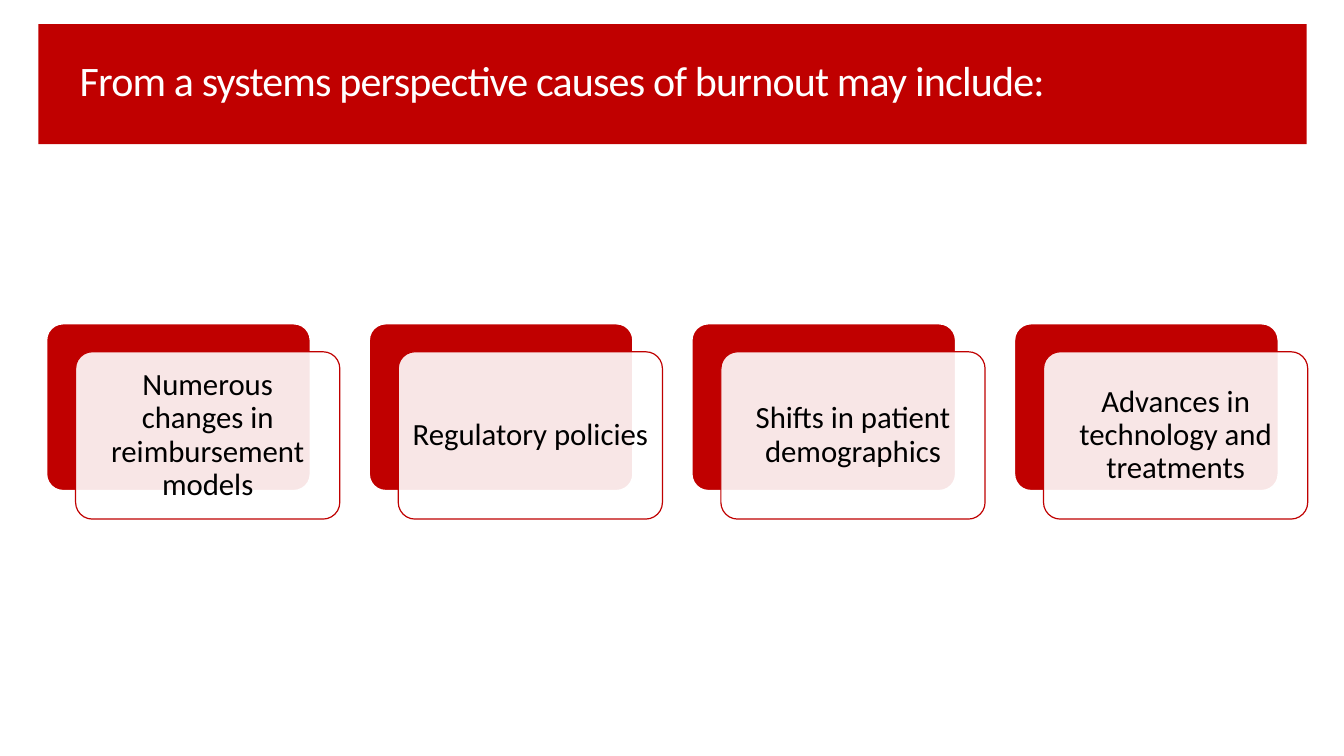
"""Build a slide on the systemic causes of burnout."""
from lxml.etree import SubElement
from pptx import Presentation
from pptx.dml.color import RGBColor
from pptx.enum.shapes import MSO_SHAPE
from pptx.enum.text import MSO_ANCHOR, MSO_AUTO_SIZE, PP_ALIGN
from pptx.oxml.ns import qn
from pptx.util import Inches, Pt

TITLE = "From a systems perspective causes of burnout may include:"
CAUSES = [
    "Numerous changes in reimbursement models",
    "Regulatory policies",
    "Shifts in patient demographics",
    "Advances in technology and treatments",
]
COLORS = {"red": "C00000", "white": "FFFFFF", "black": "000000"}
SIZE = (13.33, 7.5)
BANNER = (0.38, 0.24, 12.58, 1.19)
HEAD = (0.69, 0.33, 11.54, 0.99)
CARD = (2.62, 1.66)
LEFT, TOP, PITCH = 0.46, 3.21, 3.2
SHIFT = (0.29, 0.28)
INSET = 0.08


def color(name):
    return RGBColor.from_string(COLORS[name])


def add_box(slide, kind, box, fill, line=None, width=0):
    shape = slide.shapes.add_shape(kind, *map(Inches, box))
    shape.shadow.inherit = False
    shape.fill.solid()
    shape.fill.fore_color.rgb = color(fill)
    if line:
        shape.adjustments[0] = 0.1
        shape.line.color.rgb = color(line)
        shape.line.width = Pt(width)
    else:
        shape.line.fill.background()
    return shape


def set_text(shape, text, size, ink, align):
    frame = shape.text_frame
    frame.text = text
    frame.word_wrap = True
    frame.auto_size = MSO_AUTO_SIZE.NONE
    frame.vertical_anchor = MSO_ANCHOR.MIDDLE
    para = frame.paragraphs[0]
    para.alignment = align
    para.line_spacing = 0.9
    para.font.name = "Calibri"
    para.font.size = Pt(size)
    para.font.color.rgb = color(ink)
    return frame


def add_title(slide):
    banner = add_box(slide, MSO_SHAPE.RECTANGLE, BANNER, "red")
    title = slide.shapes.title
    title._element.addprevious(banner._element)
    title.left, title.top, title.width, title.height = map(Inches, HEAD)
    frame = set_text(title, TITLE, 30, "white", PP_ALIGN.LEFT)
    frame.paragraphs[0].runs[0]._r.get_or_add_rPr().set("spc", "-60")


def add_card(slide, col, cause):
    left = LEFT + col * PITCH
    kind = MSO_SHAPE.ROUNDED_RECTANGLE
    add_box(slide, kind, (left, TOP, *CARD), "red", "white", 1.35)
    place = (left + SHIFT[0], TOP + SHIFT[1], *CARD)
    front = add_box(slide, kind, place, "white", "red", 0.85)
    tint = front._element.spPr.find(qn("a:solidFill")).find(qn("a:srgbClr"))
    SubElement(tint, qn("a:alpha")).set("val", "90000")
    frame = set_text(front, cause, 22, "black", PP_ALIGN.CENTER)
    frame.margin_left = frame.margin_right = Inches(INSET)
    frame.margin_top = frame.margin_bottom = Inches(INSET)


def main():
    deck = Presentation()
    deck.slide_width, deck.slide_height = map(Inches, SIZE)
    slide = deck.slides.add_slide(deck.slide_layouts[5])
    add_title(slide)
    for col, cause in enumerate(CAUSES):
        add_card(slide, col, cause)
    deck.save("out.pptx")


if __name__ == "__main__":
    main()
